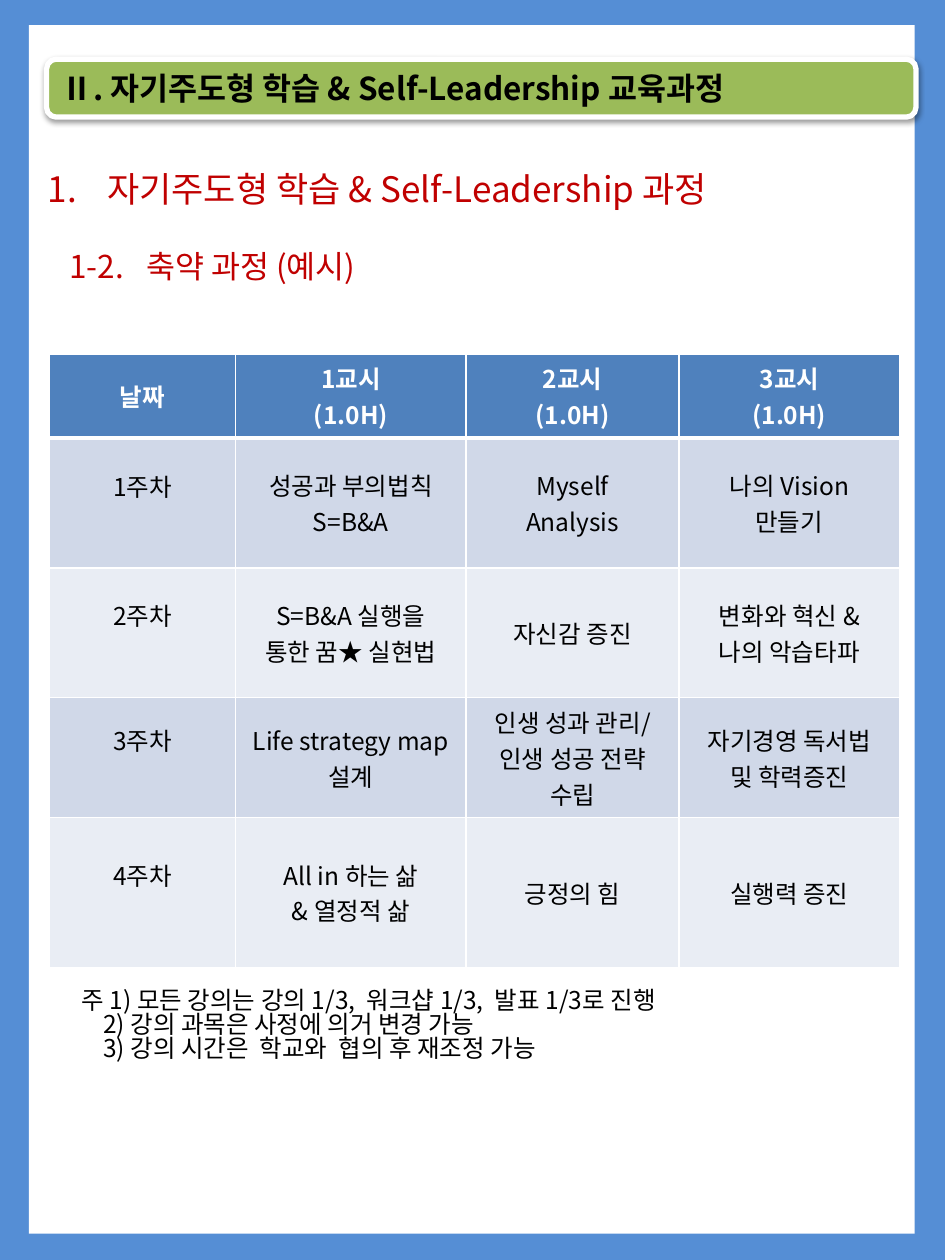
import pptx
import pptx.util
import pptx.dml.color
import pptx.enum.shapes
import pptx.enum.text
import pptx.oxml
import pptx.oxml.ns

Inches = pptx.util.Inches
Pt = pptx.util.Pt
RGBColor = pptx.dml.color.RGBColor
SHAPE = pptx.enum.shapes.MSO_SHAPE
ALIGN = pptx.enum.text.PP_ALIGN
ANCHOR = pptx.enum.text.MSO_ANCHOR
AUTO = pptx.enum.text.MSO_AUTO_SIZE
qn = pptx.oxml.ns.qn
NSDECL = pptx.oxml.ns.nsdecls("a")

FONT = "Noto Sans CJK KR"
BLACK = RGBColor(0x00, 0x00, 0x00)
WHITE = RGBColor(0xFF, 0xFF, 0xFF)
RED = RGBColor(0xC0, 0x00, 0x00)
FRAME_BLUE = RGBColor(0x55, 0x8E, 0xD5)
BANNER_GREEN = RGBColor(0x9B, 0xBB, 0x59)
HEADER_BLUE = RGBColor(0x4F, 0x81, 0xBD)
BANDS = [RGBColor(0xD0, 0xD8, 0xE8), RGBColor(0xE9, 0xED, 0xF4)]

COLUMNS = [1.48, 1.83, 1.69, 1.75]
ROWS = [0.57, 1.03, 1.03, 0.94, 1.19]
SCHEDULE = [
    ["날짜", "1교시\n(1.0H)", "2교시\n(1.0H)", "3교시\n(1.0H)"],
    ["1주차", "성공과 부의법칙 S=B&A", "Myself\nAnalysis", "나의 Vision\n만들기"],
    ["2주차", "S=B&A 실행을\n통한 꿈★ 실현법", "자신감 증진", "변화와 혁신 &\n나의 악습타파"],
    ["3주차", "Life strategy map설계", "인생 성과 관리/\n인생 성공 전략 수립", "자기경영 독서법\n및 학력증진"],
    ["4주차", "All in 하는 삶\n& 열정적 삶", "긍정의 힘", "실행력 증진"],
]
NOTES = [
    "주 1) 모든 강의는 강의 1/3,  워크샵 1/3,  발표 1/3로 진행",
    "2) 강의 과목은 사정에 의거 변경 가능",
    "3) 강의 시간은  학교와  협의 후 재조정 가능",
]


def write(p, text, size=14, color=BLACK, bold=False, align=ALIGN.LEFT,
          left=0, hanging=0, before=0, spacing=1.0):
    p.alignment = align
    p.space_before = Pt(before)
    p.line_spacing = spacing
    pPr = p._p.get_or_add_pPr()
    pPr.set("marL", str(Inches(left)))
    pPr.set("indent", str(-Inches(hanging)))
    r = p.add_run()
    r.text = text
    r.font.size = Pt(size)
    r.font.bold = bold
    r.font.color.rgb = color
    r.font.name = FONT
    r._r.get_or_add_rPr().append(
        pptx.oxml.parse_xml(f'<a:ea {NSDECL} typeface="{FONT}"/>'))


def add_box(s, kind, left, top, width, height, fill):
    sp = s.shapes.add_shape(kind, Inches(left), Inches(top), Inches(width), Inches(height))
    sp.shadow.inherit = False
    sp.fill.solid()
    sp.fill.fore_color.rgb = fill
    sp.line.fill.background()
    return sp


def place_title(s):
    sp = s.shapes.title
    s.shapes._spTree.append(sp._element)
    sp.left, sp.top, sp.width, sp.height = map(Inches, (0.23, 1.09, 7.03, 1.41))
    tf = sp.text_frame
    tf.auto_size = AUTO.NONE
    tf.vertical_anchor = ANCHOR.MIDDLE
    write(tf.paragraphs[0], "1.\t자기주도형 학습 & Self-Leadership 과정",
          size=20, color=RED, left=0.52, hanging=0.47)
    write(tf.add_paragraph(), "1-2.\t축약 과정 (예시)",
          size=18, color=RED, left=0.83, hanging=0.61, before=21.5)


def set_borders(cell, top, bottom):
    tcPr = cell._tc.get_or_add_tcPr()
    for i, (side, width) in enumerate(zip("LRTB", (1, 1, top, bottom))):
        tcPr.insert(i, pptx.oxml.parse_xml(
            f'<a:ln{side} {NSDECL} w="{Pt(width)}"><a:solidFill>'
            f'<a:srgbClr val="{WHITE}"/></a:solidFill></a:ln{side}>'))


def add_schedule(s):
    table = s.shapes.add_table(len(ROWS), len(COLUMNS), Inches(0.39), Inches(2.81),
                               Inches(sum(COLUMNS)), Inches(sum(ROWS))).table
    for column, width in zip(table.columns, COLUMNS):
        column.width = Inches(width)
    for i, (height, texts) in enumerate(zip(ROWS, SCHEDULE)):
        table.rows[i].height = Inches(height)
        header = i == 0
        for j, text in enumerate(texts):
            cell = table.cell(i, j)
            cell.vertical_anchor = ANCHOR.MIDDLE
            if j == 0 and not header:
                cell.margin_bottom = Inches(0.33)
            cell.fill.solid()
            cell.fill.fore_color.rgb = HEADER_BLUE if header else BANDS[(i - 1) % 2]
            set_borders(cell, 3 if i == 1 else 1, 3 if header else 1)
            tf = cell.text_frame
            for k, line in enumerate(text.split("\n")):
                p = tf.add_paragraph() if k else tf.paragraphs[0]
                write(p, line, color=WHITE if header else BLACK, bold=header,
                      align=ALIGN.CENTER)


def add_notes(s):
    sp = s.shapes.add_textbox(Inches(0.55), Inches(7.81), Inches(5.3), Inches(0.81))
    tf = sp.text_frame
    tf.word_wrap = False
    for i, line in enumerate(NOTES):
        p = tf.add_paragraph() if i else tf.paragraphs[0]
        write(p, line, left=0.17 if i else 0, spacing=0.82)


def add_banner(s):
    sp = add_box(s, SHAPE.ROUNDED_RECTANGLE, 0.37, 0.47, 6.9, 0.46, BANNER_GREEN)
    sp.line.color.rgb = WHITE
    sp.line.width = Pt(3)
    effects = sp._element.spPr.find(qn("a:effectLst"))
    effects.append(pptx.oxml.parse_xml(
        f'<a:outerShdw {NSDECL} blurRad="{Pt(3.1)}" dist="{Pt(1.6)}" dir="5400000" '
        f'rotWithShape="0"><a:srgbClr val="{BLACK}"><a:alpha val="38000"/>'
        '</a:srgbClr></a:outerShdw>'))
    tf = sp.text_frame
    tf.word_wrap = True
    tf.vertical_anchor = ANCHOR.MIDDLE
    write(tf.paragraphs[0], "Ⅱ. 자기주도형 학습 & Self-Leadership 교육과정",
          size=18, bold=True)


def main():
    prs = pptx.Presentation()
    prs.slide_width, prs.slide_height = Inches(7.5), Inches(10)
    s = prs.slides.add_slide(prs.slide_layouts[5])
    add_box(s, SHAPE.RECTANGLE, 0, 0, 7.5, 10, FRAME_BLUE)
    add_box(s, SHAPE.RECTANGLE, 0.23, 0.2, 7.03, 9.59, WHITE)
    place_title(s)
    add_schedule(s)
    add_notes(s)
    add_banner(s)
    prs.save("out.pptx")


if __name__ == "__main__":
    main()
